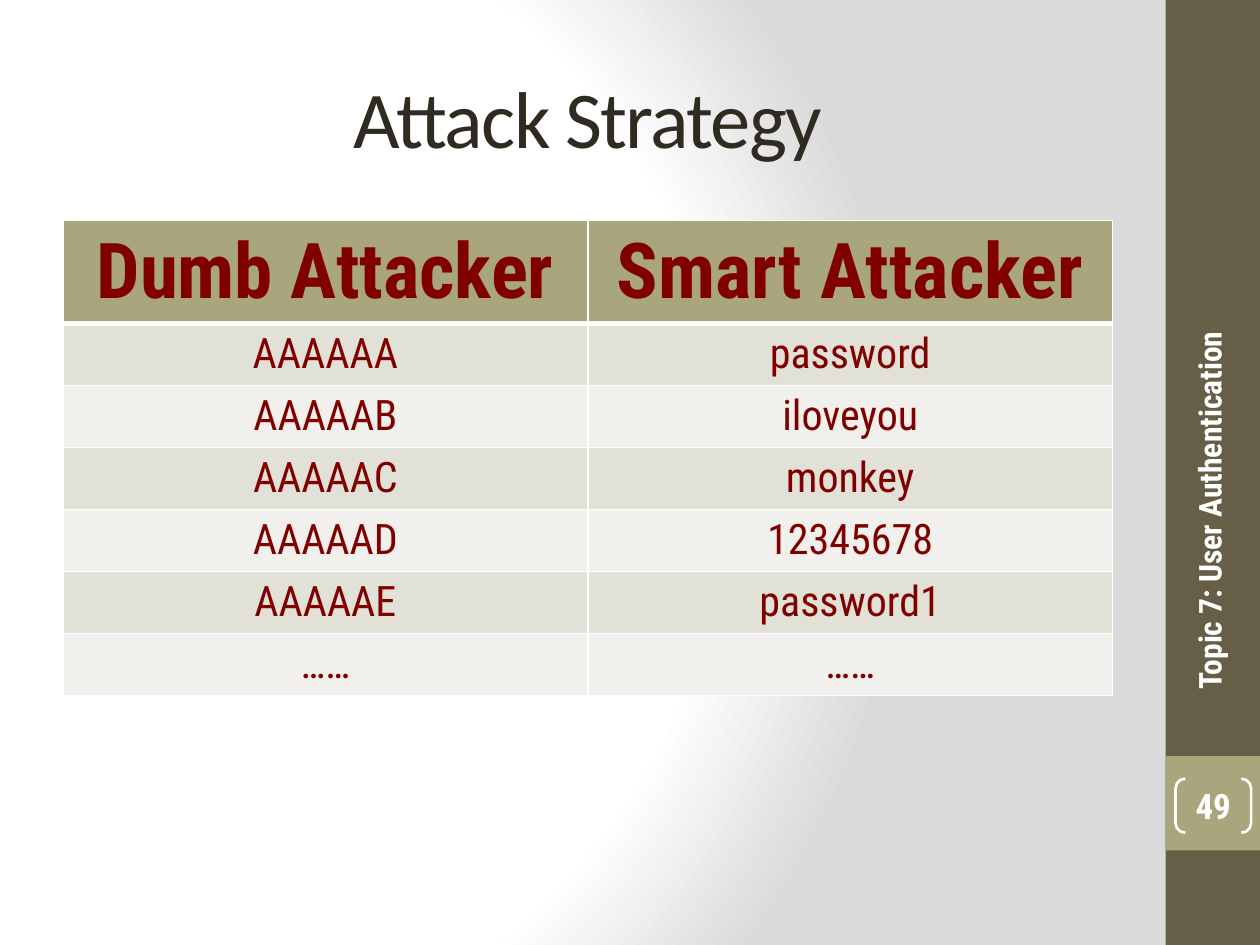
import pptx
import pptx.chart.data
import pptx.dml.color
import pptx.enum.shapes
import pptx.enum.text
import pptx.oxml
import pptx.oxml.ns
import pptx.util

Inches = pptx.util.Inches
RGB = pptx.dml.color.RGBColor
SHAPE = pptx.enum.shapes.MSO_SHAPE
ALIGN = pptx.enum.text.PP_ALIGN
MIDDLE = pptx.enum.text.MSO_ANCHOR.MIDDLE

WHITE = RGB(0xFF, 0xFF, 0xFF)
GRAY = RGB(0xDA, 0xDA, 0xDA)
BROWN = RGB(0x67, 0x5E, 0x47)
OLIVE = RGB(0xA9, 0xA5, 0x7C)
DARK = RGB(0x2F, 0x2B, 0x20)
RED = RGB(0x80, 0x00, 0x00)
BANDS = (RGB(0xE2, 0xE1, 0xD7), RGB(0xF1, 0xF0, 0xEC))
ROBOTO = "Roboto Condensed"

ROWS = [
    ("Dumb Attacker", "Smart Attacker"),
    ("AAAAAA", "password"),
    ("AAAAAB", "iloveyou"),
    ("AAAAAC", "monkey"),
    ("AAAAAD", "12345678"),
    ("AAAAAE", "password1"),
    ("……", "……"),
]


def parse(xml):
    head, tail = xml.split(">", 1)
    return pptx.oxml.parse_xml(f"{head} {pptx.oxml.ns.nsdecls('a')}>{tail}")


def write(frame, text, size, color, font=ROBOTO, bold=False):
    para = frame.paragraphs[0]
    para.alignment = ALIGN.CENTER
    run = para.add_run()
    run.text = text
    run.font.size = pptx.util.Pt(size)
    run.font.name = font
    run.font.bold = bold
    run.font.color.rgb = color
    return run


def paint(slide):
    fill = slide.background.fill
    fill.solid()
    fill.fore_color.rgb = WHITE
    stops = "".join(
        f'<a:gs pos="{pos}000"><a:srgbClr val="{color}"/></a:gs>'
        for pos, color in ((0, WHITE), (75, WHITE), (100, GRAY))
    )
    grad = parse(
        f'<a:gradFill rotWithShape="1"><a:gsLst>{stops}</a:gsLst>'
        '<a:path path="circle"><a:fillToRect l="20000" t="50000" '
        'r="100000" b="50000"/></a:path></a:gradFill>'
    )
    solid = next(slide.background._cSld.iter(pptx.oxml.ns.qn("a:solidFill")))
    solid.getparent().replace(solid, grad)


def add_block(slide, top, height, color):
    block = slide.shapes.add_shape(
        SHAPE.RECTANGLE, Inches(9.25), Inches(top), Inches(0.75), Inches(height))
    block.shadow.inherit = False
    block.fill.solid()
    block.fill.fore_color.rgb = color
    block.line.fill.background()


def set_title(slide):
    title = slide.shapes.title
    title.left, title.top = Inches(0.5), Inches(0.3)
    title.width, title.height = Inches(8.33), Inches(1.25)
    title.text_frame.vertical_anchor = MIDDLE
    run = write(title.text_frame, "Attack Strategy", 46, DARK, "Calibri")
    run.font._element.set("spc", "-100")


def set_edges(cell, widths):
    props = cell._tc.get_or_add_tcPr()
    for spot, (side, width) in enumerate(widths.items()):
        props.insert(spot, parse(
            f'<a:ln{side} w="{pptx.util.Pt(width)}"><a:solidFill>'
            f'<a:srgbClr val="{WHITE}"/></a:solidFill></a:ln{side}>'))


def add_grid(slide):
    frame = slide.shapes.add_table(
        len(ROWS), 2, Inches(0.5), Inches(1.75), Inches(8.33), Inches(3.76))
    table = frame.table
    for r, words in enumerate(ROWS):
        head = r == 0
        table.rows[r].height = Inches(0.81 if head else 0.49)
        edges = {"L": 1, "R": 1, "T": 3 if r == 1 else 1, "B": 3 if head else 1}
        for c, word in enumerate(words):
            cell = table.cell(r, c)
            cell.fill.solid()
            cell.fill.fore_color.rgb = OLIVE if head else BANDS[(r - 1) % 2]
            set_edges(cell, edges)
            write(cell.text_frame, word, 44 if head else 24, RED, bold=head)


def add_topic(slide):
    box = slide.shapes.add_textbox(
        Inches(7.72), Inches(3.85), Inches(3.75), Inches(0.4))
    box.rotation = 270
    frame = box.text_frame
    frame.word_wrap = True
    frame.vertical_anchor = MIDDLE
    write(frame, "Topic 7: User Authentication", 18, WHITE, bold=True)


def add_number(slide):
    mark = slide.shapes.add_shape(
        SHAPE.DOUBLE_BRACKET, Inches(9.33), Inches(6.18), Inches(0.6), Inches(0.43))
    mark.shadow.inherit = False
    mark.adjustments[0] = 0.18
    mark.fill.background()
    mark.line.color.rgb = WHITE
    mark.line.width = pptx.util.Pt(1.5)
    frame = mark.text_frame
    frame.margin_left = frame.margin_right = 0
    frame.margin_top = frame.margin_bottom = 0
    frame.vertical_anchor = MIDDLE
    write(frame, "49", 20, WHITE, bold=True)


def main():
    deck = pptx.Presentation()
    deck.slide_width, deck.slide_height = Inches(10), Inches(7.5)
    slide = deck.slides.add_slide(deck.slide_layouts[5])
    paint(slide)
    add_block(slide, 0, 7.5, BROWN)
    add_block(slide, 6, 0.75, OLIVE)
    set_title(slide)
    add_grid(slide)
    add_topic(slide)
    add_number(slide)
    deck.save("out.pptx")


if __name__ == "__main__":
    main()
